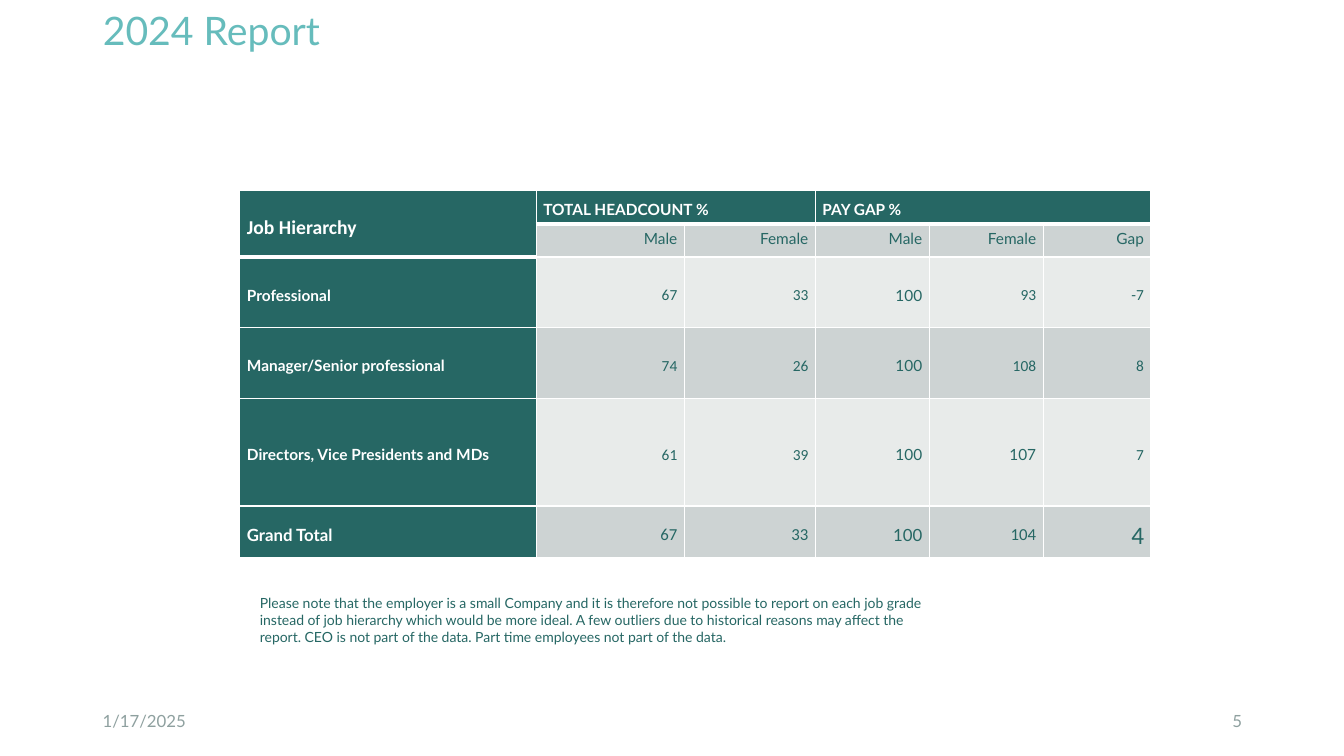
from dataclasses import dataclass

from lxml import etree
from pptx import Presentation
from pptx.dml.color import RGBColor
from pptx.enum.text import MSO_ANCHOR, MSO_AUTO_SIZE, PP_ALIGN
from pptx.oxml.ns import qn
from pptx.util import Emu, Inches, Pt

LEFT, RIGHT = PP_ALIGN.LEFT, PP_ALIGN.RIGHT
TOP, MIDDLE = MSO_ANCHOR.TOP, MSO_ANCHOR.MIDDLE
NO_AUTOFIT = MSO_AUTO_SIZE.NONE

COLORS = {
    "title": "66BCBC",
    "dark": "266764",
    "white": "FFFFFF",
    "footer": "8EA09F",
    "band": "CDD3D3",
    "light": "E8EBEA",
}
LATO, CALIBRI = "Lato", "Calibri"

# Square grid: ten units to the inch
UNIT = Inches(0.1)
SLIDE_COLUMNS, SLIDE_ROWS = 133.33, 75
COLUMN_WIDTHS = (29.4, 14.7, 13, 11.3, 11.3, 10.7)
ROW_HEIGHTS = (3.3, 3.3, 7, 7, 10.7, 5.1)


@dataclass(frozen=True)
class Area:
    column: float
    row: float
    columns: float
    rows: float

    def box(self) -> tuple[Emu, ...]:
        return tuple(grid(n) for n in (self.column, self.row, self.columns, self.rows))


@dataclass(frozen=True)
class Caption:
    area: Area
    text: str
    size: float
    color: str
    align: PP_ALIGN = LEFT
    anchor: MSO_ANCHOR = MIDDLE


@dataclass(frozen=True)
class JobRow:
    label: str
    values: tuple[str, ...]
    fill: str
    label_size: float = 11
    value_size: float = 11
    gap_size: float = 11
    lato_columns: tuple[int, ...] = (3,)


TITLE_AREA = Area(9.2, 0.5, 115, 5.5)
TABLE_AREA = Area(23.8, 18.9, sum(COLUMN_WIDTHS), sum(ROW_HEIGHTS))
HEADER_GROUPS = (("TOTAL HEADCOUNT %", 1, 2), ("PAY GAP %", 3, 5))
SUBHEADERS = ("Male", "Female", "Male", "Female", "Gap")
JOB_ROWS = (
    JobRow("Professional", ("67", "33", "100", "93", "-7"), "light"),
    JobRow("Manager/Senior professional", ("74", "26", "100", "108", "8"), "band"),
    JobRow("Directors, Vice Presidents and MDs", ("61", "39", "100", "107", "7"),
           "light", lato_columns=(3, 4)),
    JobRow("Grand Total", ("67", "33", "100", "104", "4"), "band",
           label_size=12, value_size=12, gap_size=18),
)
CAPTIONS = (
    Caption(Area(9.2, 69.5, 30, 4), "1/17/2025", 12, "footer"),
    Caption(Area(94.2, 69.5, 30, 4), "5", 12, "footer", RIGHT),
    Caption(
        Area(24.8, 58.5, 68.3, 6.1),
        "Please note that the employer is a small Company and it is therefore not possible "
        "to report on each job grade instead of job hierarchy which would be more ideal. "
        "A few outliers due to historical reasons may affect the report. CEO is not part "
        "of the data. Part time employees not part of the data.",
        10, "dark", anchor=TOP),
)


def grid(units: float) -> Emu:
    return Emu(round(units * UNIT))


def write(text_frame, text: str, *, size: float, color: str, font: str = LATO,
          bold: bool = False, align: PP_ALIGN = LEFT, spacing: float = 1.0) -> None:
    paragraph = text_frame.paragraphs[0]
    paragraph.alignment = align
    paragraph.line_spacing = spacing
    run = paragraph.add_run()
    run.text = text
    run.font.size = Pt(size)
    run.font.name = font
    run.font.bold = bold
    run.font.color.rgb = RGBColor.from_string(COLORS[color])


def set_borders(cell, top: float, bottom: float) -> None:
    properties = cell._tc.get_or_add_tcPr()
    for tag, width in (("a:lnL", 1), ("a:lnR", 1), ("a:lnT", top), ("a:lnB", bottom)):
        line = etree.SubElement(properties, qn(tag), w=str(Pt(width)))
        fill = etree.SubElement(line, qn("a:solidFill"))
        etree.SubElement(fill, qn("a:srgbClr"), val=COLORS["white"])


def format_cell(cell, fill: str, top: float, bottom: float) -> None:
    set_borders(cell, top, bottom)
    cell.fill.solid()
    cell.fill.fore_color.rgb = RGBColor.from_string(COLORS[fill])
    cell.margin_left = cell.margin_right = Inches(0.07)
    cell.margin_top = cell.margin_bottom = 0
    cell.vertical_anchor = MIDDLE


def header_bottom(row: int, column: int) -> int:
    """Width of the rule under a cell: heavy below the header block."""
    return 3 if row == 0 or (row == 1 and column == 0) else 1


def cell_fill(row: int, column: int) -> str:
    if row == 0 or column == 0:
        return "dark"
    return "band" if row == 1 else JOB_ROWS[row - 2].fill


def add_title(slide) -> None:
    title = slide.shapes.title
    title.left, title.top, title.width, title.height = TITLE_AREA.box()
    title.text_frame.auto_size = NO_AUTOFIT
    title.text_frame.vertical_anchor = MIDDLE
    write(title.text_frame, "2024 Report", size=28, color="title", spacing=0.9)


def add_pay_table(slide) -> None:
    table = slide.shapes.add_table(
        len(ROW_HEIGHTS), len(COLUMN_WIDTHS), *TABLE_AREA.box()).table
    table.first_row = table.horz_banding = False
    for column, width in zip(table.columns, COLUMN_WIDTHS):
        column.width = grid(width)
    for row, height in zip(table.rows, ROW_HEIGHTS):
        row.height = grid(height)
    for row in range(len(ROW_HEIGHTS)):
        for column in range(len(COLUMN_WIDTHS)):
            top = header_bottom(row - 1, column) if row else 1
            format_cell(table.cell(row, column), cell_fill(row, column),
                        top, header_bottom(row, column))

    # Header block
    corner = table.cell(0, 0)
    corner.merge(table.cell(1, 0))
    write(corner.text_frame, "Job Hierarchy", size=14, color="white",
          font=CALIBRI, bold=True, spacing=1.3)
    for text, first, last in HEADER_GROUPS:
        cell = table.cell(0, first)
        cell.merge(table.cell(0, last))
        write(cell.text_frame, text, size=11, color="white", bold=True, spacing=1.3)
    for column, text in enumerate(SUBHEADERS, start=1):
        cell = table.cell(1, column)
        cell.vertical_anchor = TOP
        write(cell.text_frame, text, size=11, color="dark", align=RIGHT, spacing=1.3)

    # Job levels
    for row, job in enumerate(JOB_ROWS, start=2):
        write(table.cell(row, 0).text_frame, job.label, size=job.label_size,
              color="white", bold=True, spacing=1.3)
        for column, value in enumerate(job.values, start=1):
            write(table.cell(row, column).text_frame, value,
                  size=job.gap_size if column == len(job.values) else job.value_size,
                  color="dark", font=LATO if column in job.lato_columns else CALIBRI,
                  align=RIGHT, spacing=1.3)


def add_caption(slide, caption: Caption) -> None:
    text_frame = slide.shapes.add_textbox(*caption.area.box()).text_frame
    text_frame.word_wrap = True
    text_frame.vertical_anchor = caption.anchor
    write(text_frame, caption.text, size=caption.size, color=caption.color,
          align=caption.align)


def main() -> None:
    presentation = Presentation()
    presentation.slide_width = grid(SLIDE_COLUMNS)
    presentation.slide_height = grid(SLIDE_ROWS)
    slide = presentation.slides.add_slide(presentation.slide_layouts[5])
    add_title(slide)
    add_pay_table(slide)
    for caption in CAPTIONS:
        add_caption(slide, caption)
    presentation.save("out.pptx")


if __name__ == "__main__":
    main()
